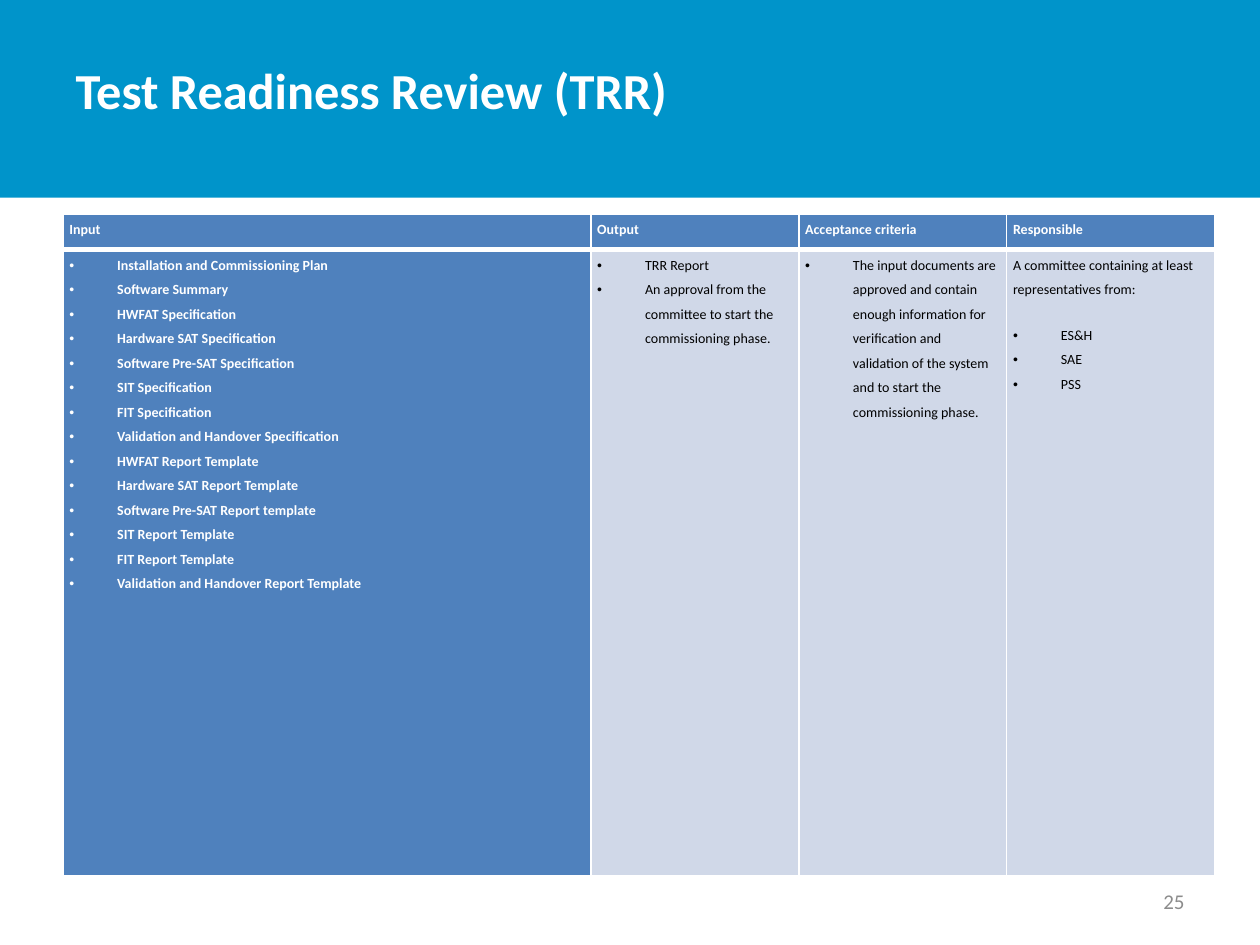
from dataclasses import dataclass

from lxml.etree import SubElement
from pptx import Presentation
from pptx.dml.color import RGBColor as RGB
from pptx.enum.shapes import MSO_SHAPE as SHAPE
from pptx.enum.text import MSO_ANCHOR as ANCHOR, MSO_AUTO_SIZE as AUTO, PP_ALIGN as ALIGN
from pptx.oxml import parse_xml
from pptx.oxml.ns import nsdecls, qn
from pptx.util import Inches, Pt


@dataclass(frozen=True)
class Theme:
    """Colours, font and type sizes of the slide."""
    font: str = "Calibri"
    band: str = "0094CA"
    header: str = "4F81BD"
    body: str = "D0D8E8"
    light: str = "FFFFFF"
    dark: str = "000000"
    muted: str = "8C8C8C"
    title_size: float = 28.8
    table_size: float = 8
    number_size: float = 12


THEME = Theme()
BULLET = "•"
HEADERS = ["Input", "Output", "Acceptance criteria", "Responsible"]
SUBJECTS = ["HWFAT", "Hardware SAT", "Software Pre-SAT", "SIT", "FIT", "Validation and Handover"]
INPUTS = [
    "Installation and Commissioning Plan",
    "Software Summary",
    *[f"{name} Specification" for name in SUBJECTS],
    *[f"{name} Report {'template' if name == 'Software Pre-SAT' else 'Template'}" for name in SUBJECTS],
]
OUTPUTS = [
    "TRR Report",
    "An approval from the committee to start the commissioning phase.",
]
CRITERIA = [
    "The input documents are approved and contain enough information for "
    "verification and validation of the system and to start the commissioning phase.",
]
COMMITTEE_INTRO = "A committee containing at least representatives from:"
COMMITTEE = ["ES&H", "SAE", "PSS"]


def style_font(p, size, color, bold=False):
    """Format every run of a paragraph."""
    for r in p.runs:
        font = r.font
        font.name, font.size, font.bold = THEME.font, Pt(size), bold
        font.color.rgb = RGB.from_string(color)


def add_band(slide):
    """Draw the coloured band behind the title."""
    sp = slide.shapes.add_shape(SHAPE.RECTANGLE, 0, 0, Inches(10), Inches(1.57))
    sp.shadow.inherit = False
    sp.fill.solid()
    sp.fill.fore_color.rgb = RGB.from_string(THEME.band)
    sp.line.fill.background()
    slide.shapes._spTree.insert(2, sp._element)


def set_title(slide, text):
    """Place and format the title placeholder."""
    sp = slide.shapes.title
    sp.left, sp.top, sp.width, sp.height = map(Inches, (0.5, 0.3, 7.81, 1.25))
    tf = sp.text_frame
    tf.text = text
    tf.auto_size = AUTO.NONE
    tf.vertical_anchor = ANCHOR.TOP
    tf.margin_top = Inches(0.17)
    p = tf.paragraphs[0]
    p.alignment = ALIGN.LEFT
    style_font(p, THEME.title_size, THEME.light, True)


def set_borders(cell, top, bottom):
    """Give a cell white borders of the stated top and bottom widths."""
    tc_pr = cell._tc.get_or_add_tcPr()
    for i, (side, width) in enumerate(zip("LRTB", (1, 1, top, bottom))):
        tc_pr.insert(i, parse_xml(
            f'<a:ln{side} {nsdecls("a")} w="{Pt(width)}"><a:solidFill>'
            f'<a:srgbClr val="{THEME.light}"/></a:solidFill></a:ln{side}>'))


def add_bullet(p):
    """Turn a paragraph into a hanging bullet."""
    p_pr = p._p.get_or_add_pPr()
    p_pr.set("marL", str(Inches(0.38)))
    p_pr.set("indent", str(-Inches(0.38)))
    SubElement(p_pr, qn("a:buFont")).set("typeface", "Arial")
    SubElement(p_pr, qn("a:buChar")).set("char", BULLET)


def fill_cell(cell, fill, color, bold, intro=None, items=()):
    """Write an optional lead paragraph and bulleted items into a cell."""
    cell.fill.solid()
    cell.fill.fore_color.rgb = RGB.from_string(fill)
    cell.margin_left = cell.margin_right = Inches(0.05)
    cell.margin_top = cell.margin_bottom = 0
    lead = [intro] if intro else []
    tf = cell.text_frame
    tf.text = "\n".join([*lead, *items])
    for i, p in enumerate(tf.paragraphs):
        if i >= len(lead):
            add_bullet(p)
        elif items:
            p.space_after = Pt(12)
        p.line_spacing = Pt(14)
        style_font(p, THEME.table_size, color, bold)


def add_review_table(slide):
    """Add the table of review inputs, outputs, criteria and people."""
    frame = slide.shapes.add_table(2, 4, *map(Inches, (0.5, 1.7, 9.14, 5.25)))
    table = frame.table
    table.horz_banding = False
    table.first_col = True
    for col, width in zip(table.columns, (4.19, 1.65, 1.65, 1.65)):
        col.width = Inches(width)
    for row, height in zip(table.rows, (0.28, 4.97)):
        row.height = Inches(height)
    contents = [(None, INPUTS), (None, OUTPUTS), (None, CRITERIA), (COMMITTEE_INTRO, COMMITTEE)]
    for c, (header, (intro, items)) in enumerate(zip(HEADERS, contents)):
        head, body = table.cell(0, c), table.cell(1, c)
        fill_cell(head, THEME.header, THEME.light, True, header)
        set_borders(head, 1, 3)
        fill, color = (THEME.body, THEME.dark) if c else (THEME.header, THEME.light)
        fill_cell(body, fill, color, c == 0, intro, items)
        set_borders(body, 3, 1)


def add_slide_number(slide, text):
    """Add the slide number at the bottom right."""
    tf = slide.shapes.add_textbox(*map(Inches, (7.17, 6.95, 2.33, 0.4))).text_frame
    tf.word_wrap = True
    tf.vertical_anchor = ANCHOR.MIDDLE
    tf.text = text
    p = tf.paragraphs[0]
    p.alignment = ALIGN.RIGHT
    style_font(p, THEME.number_size, THEME.muted)


def main():
    """Build and save the slide."""
    prs = Presentation()
    prs.slide_width, prs.slide_height = Inches(10), Inches(7.5)
    slide = prs.slides.add_slide(prs.slide_layouts[5])
    add_band(slide)
    set_title(slide, "Test Readiness Review (TRR)")
    add_review_table(slide)
    add_slide_number(slide, "25")
    prs.save("out.pptx")


if __name__ == "__main__":
    main()
